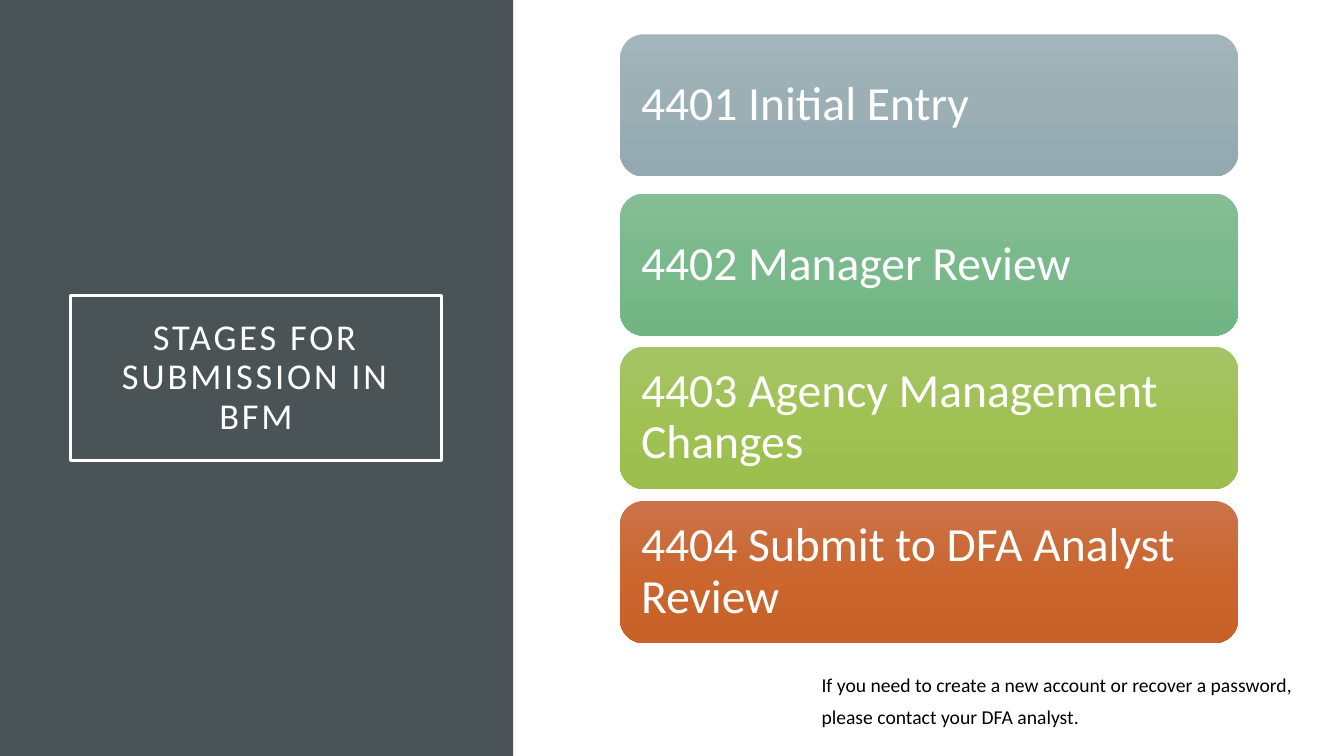
import copy
from dataclasses import dataclass

import pptx
import pptx.dml.color
import pptx.enum.shapes
import pptx.enum.text
import pptx.util
from pptx.util import Inches

MSO_SHAPE = pptx.enum.shapes.MSO_SHAPE
PP_ALIGN = pptx.enum.text.PP_ALIGN


@dataclass(frozen=True)
class Theme:
    font: str = "Calibri"
    panel: str = "4A5356"
    light: str = "FFFFFF"
    dark: str = "000000"
    title_size: int = 26
    stage_size: int = 34
    note_size: int = 14


THEME = Theme()

STAGES = [
    ("4401 Initial Entry", 0.34, ("A3B5BB", "9BAFB5", "93A9AF")),
    ("4402 Manager Review", 1.92, ("86BD95", "7AB98B", "72B584")),
    ("4403 Agency Management Changes", 3.44, ("A5C466", "A0C255", "9BBE4D")),
    ("4404 Submit to DFA Analyst Review", 4.97, ("CC734B", "CB662F", "C86128")),
]

NOTE = [
    "If you need to create a new account or recover a password,",
    "please contact your DFA analyst.",
]


def rgb(value):
    return pptx.dml.color.RGBColor.from_string(value)


def add_run(p, text, size, color):
    r = p.add_run()
    r.text = text
    r.font.name = THEME.font
    r.font.size = pptx.util.Pt(size)
    r.font.color.rgb = rgb(color)
    return r


def set_frame(tf, inset):
    tf.word_wrap = True
    tf.auto_size = pptx.enum.text.MSO_AUTO_SIZE.NONE
    tf.vertical_anchor = pptx.enum.text.MSO_ANCHOR.MIDDLE
    tf.margin_left = tf.margin_right = Inches(inset)
    tf.margin_top = tf.margin_bottom = Inches(inset)


def fill_gradient(fill, colors):
    fill.gradient()
    fill.gradient_angle = 270
    first = fill.gradient_stops[0]._gs
    first.addnext(copy.deepcopy(first))
    for i, (stop, color) in enumerate(zip(fill.gradient_stops, colors)):
        stop.position = i / (len(colors) - 1)
        stop.color.rgb = rgb(color)


def add_panel(s):
    sp = s.shapes.add_shape(MSO_SHAPE.RECTANGLE, 0, 0, Inches(5.09), Inches(7.5))
    sp.shadow.inherit = False
    sp.fill.solid()
    sp.fill.fore_color.rgb = rgb(THEME.panel)
    sp.line.fill.background()
    s.shapes._spTree.insert(2, sp._element)


def set_title(s, text):
    sp = s.shapes.title
    sp.left, sp.top = Inches(0.7), Inches(2.93)
    sp.width, sp.height = Inches(3.68), Inches(1.64)
    sp.line.color.rgb = rgb(THEME.light)
    sp.line.width = pptx.util.Pt(2.5)
    set_frame(sp.text_frame, 0.2)
    p = sp.text_frame.paragraphs[0]
    p.alignment = PP_ALIGN.CENTER
    p.line_spacing = 0.9
    r = add_run(p, text, THEME.title_size, THEME.light)
    r.font._element.set("spc", "200")


def add_stage(s, text, top, colors):
    sp = s.shapes.add_shape(
        MSO_SHAPE.ROUNDED_RECTANGLE,
        Inches(6.15), Inches(top), Inches(6.13), Inches(1.41),
    )
    sp.shadow.inherit = False
    fill_gradient(sp.fill, colors)
    sp.line.fill.background()
    set_frame(sp.text_frame, 0.14)
    p = sp.text_frame.paragraphs[0]
    p.alignment = PP_ALIGN.LEFT
    p.line_spacing = 0.9
    add_run(p, text, THEME.stage_size, THEME.light)


def add_note(s, lines):
    sp = s.shapes.add_textbox(Inches(8.05), Inches(6.63), Inches(4.97), Inches(0.66))
    tf = sp.text_frame
    tf.word_wrap = False
    for i, line in enumerate(lines):
        p = tf.add_paragraph() if i else tf.paragraphs[0]
        p.alignment = PP_ALIGN.LEFT
        p.space_after = pptx.util.Pt(6)
        add_run(p, line, THEME.note_size, THEME.dark)


def main():
    prs = pptx.Presentation()
    prs.slide_width, prs.slide_height = Inches(13.33), Inches(7.5)
    s = prs.slides.add_slide(prs.slide_layouts.get_by_name("Title Only"))
    add_panel(s)
    set_title(s, "STAGES FOR SUBMISSION IN BFM")
    add_note(s, NOTE)
    for text, top, colors in STAGES:
        add_stage(s, text, top, colors)
    prs.save("out.pptx")


if __name__ == "__main__":
    main()
